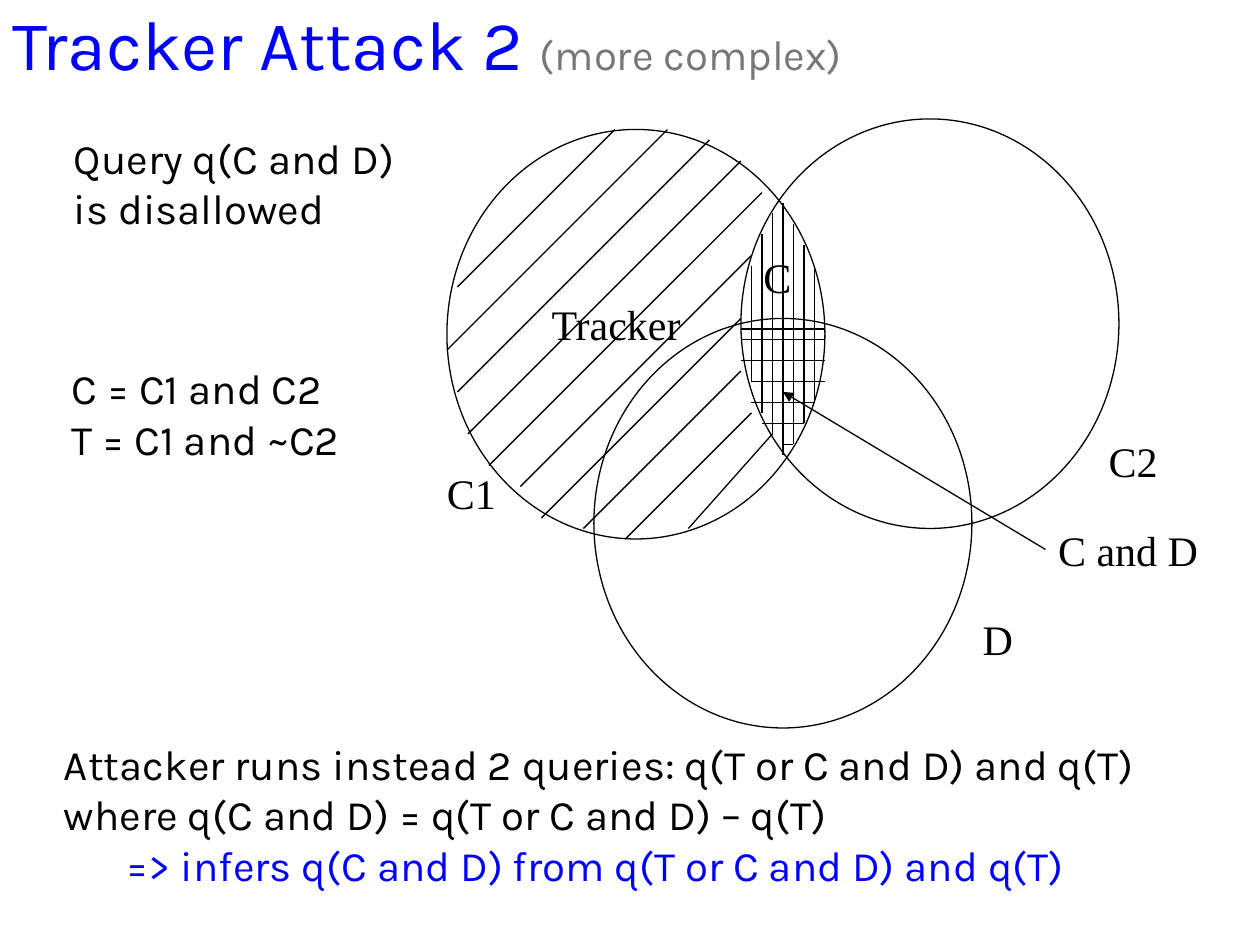
from lxml import etree
from pptx import Presentation
from pptx import util as u
from pptx.dml.color import RGBColor
from pptx.enum import shapes, text
from pptx.oxml import ns

INK = {"black": "000000", "blue": "0000FF", "grey": "777777"}
SANS, SERIF = "Karla", "Times New Roman"

# The diagram sits on a grid of 1/12 inch, with its origin at the corner of C1.
STEP = 2.54 / 12
LEFT, TOP = 9.01, 2.61

CIRCLES = [(0, 0), (28, -1), (14, 18)]
WIDE, HIGH = 36, 39

# Hatching of the tracker: upper end, lower end
SLANTS = [
    (16, 0, 1, 15), (21, 0, 0, 21), (25, 1, 1, 25), (28, 3, 2, 29),
    (30, 6, 4, 32), (29, 12, 7, 34), (28, 18, 9, 37), (28, 23, 13, 38),
    (29, 27, 17, 39), (31, 29, 23, 38),
]
# Column: top, bottom
COLS = {29: (13, 24), 30: (10, 27), 31: (8, 29), 32: (7, 31),
        33: (9, 30), 34: (11, 28), 35: (13, 26)}
# Row: left, right
ROWS = {19: (28, 36), 20: (28, 36), 22: (28, 36), 24: (29, 36),
        26: (29, 35), 28: (30, 34), 30: (32, 33)}

LABELS = [
    ("Tracker", 10.87, 5.89, 3.15),
    ("C", 15.14, 4.95, 1.07),
    ("C1", 8.76, 9.3, 1.5),
    ("C2", 22.1, 8.66, 1.5),
    ("D", 19.56, 12.24, 1.12),
    ("C and D", 21.08, 10.44, 3.33),
]


def tint(name):
    return RGBColor.from_string(INK[name])


def grid(x, y):
    """Turn grid steps into a place on the slide."""
    return u.Cm(LEFT + x * STEP), u.Cm(TOP + y * STEP)


def style(font, face, size, ink):
    font.name, font.size = face, u.Pt(size)
    font.color.rgb = tint(ink)


def add_text(tree, box, lines, face=SANS, wrap=True):
    """Add a text box; each line is a pair of wording and colour."""
    frame = tree.add_textbox(*map(u.Cm, box)).text_frame
    frame.word_wrap = wrap
    frame.auto_size = text.MSO_AUTO_SIZE.SHAPE_TO_FIT_TEXT
    for i, (words, ink) in enumerate(lines):
        para = frame.paragraphs[0] if i == 0 else frame.add_paragraph()
        para.text = words
        style(para.font, face, 24, ink)


def add_title(tree):
    frame = tree.add_textbox(0, 0, u.Cm(25.4), u.Cm(1.83)).text_frame
    frame.word_wrap = True
    frame.vertical_anchor = text.MSO_ANCHOR.BOTTOM
    para = frame.paragraphs[0]
    for words, size, ink in [("Tracker Attack 2 ", 40, "blue"),
                             ("(more complex)", 24, "grey")]:
        run = para.add_run()
        run.text = words
        style(run.font, SANS, size, ink)


def add_circle(tree, x, y):
    oval = tree.add_shape(shapes.MSO_SHAPE.OVAL, *grid(x, y),
                          u.Cm(WIDE * STEP), u.Cm(HIGH * STEP))
    oval.shadow.inherit = False
    oval.fill.background()
    oval.line.color.rgb = tint("black")
    oval.line.width = u.Pt(0.75)


def add_line(tree, x1, y1, x2, y2, arrow=False):
    line = tree.add_connector(shapes.MSO_CONNECTOR.STRAIGHT,
                              *grid(x1, y1), *grid(x2, y2))
    line.line.color.rgb = tint("black")
    line.line.width = u.Pt(0.75)
    if arrow:
        etree.SubElement(line.line._get_or_add_ln(), ns.qn("a:tailEnd"),
                         type="triangle")
    etree.SubElement(line._element.spPr, ns.qn("a:effectLst"))


def add_venn(tree):
    for spot in CIRCLES:
        add_circle(tree, *spot)
    for ends in SLANTS:
        add_line(tree, *ends)
    for x, (top, low) in COLS.items():
        add_line(tree, x, top, x, low)
    for y, (left, right) in ROWS.items():
        add_line(tree, left, y, right, y)
    for words, x, y, wide in LABELS:
        add_text(tree, (x, y, wide, 1.27), [(words, "black")], SERIF, False)
    add_line(tree, 57, 40, 32, 25, arrow=True)


def main():
    deck = Presentation()
    deck.slide_width, deck.slide_height = u.Cm(25.4), u.Cm(19.05)
    tree = deck.slides.add_slide(deck.slide_layouts[6]).shapes
    add_title(tree)
    add_text(tree, (1.19, 7.19, 6.63, 2.29),
             [("C = C1 and C2", "black"), ("T = C1 and ~C2", "black")],
             wrap=False)
    add_venn(tree.add_group_shape().shapes)
    add_text(tree, (1.24, 2.54, 8.92, 2.29),
             [("Query q(C and D)", "black"), ("is disallowed", "black")])
    add_text(tree, (1.04, 14.76, 23.52, 3.3), [
        ("Attacker runs instead 2 queries: q(T or C and D) and q(T)", "black"),
        ("where q(C and D) = q(T or C and D) – q(T)", "black"),
        ("\t=> infers q(C and D) from q(T or C and D) and q(T)", "blue"),
    ])
    deck.save("out.pptx")


if __name__ == "__main__":
    main()
